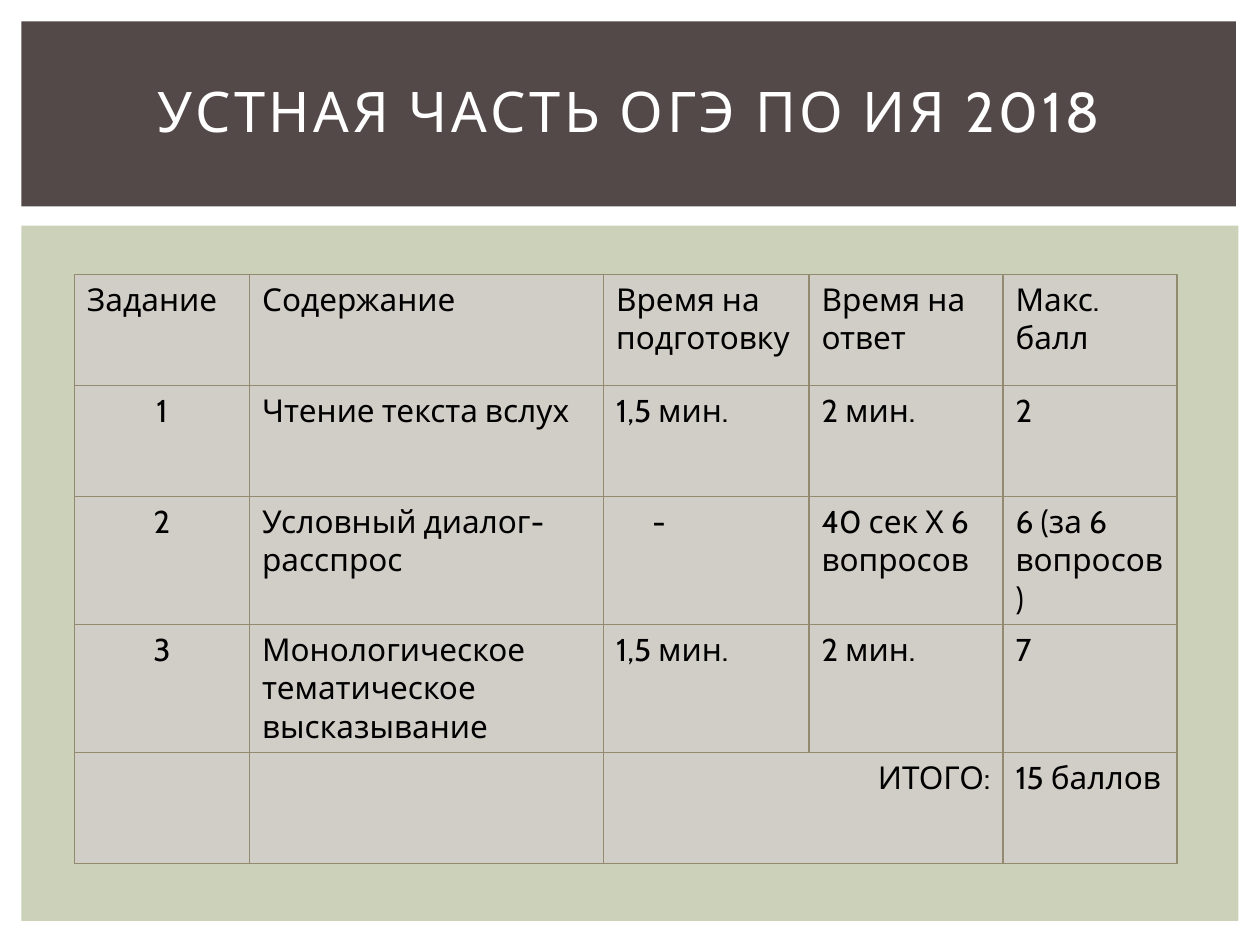
import pptx
import pptx.util
import pptx.dml.color
import pptx.enum.shapes
import pptx.enum.text
import pptx.oxml.ns
from dataclasses import dataclass
from lxml import etree

Pt = pptx.util.Pt
RGBColor = pptx.dml.color.RGBColor
Align = pptx.enum.text.PP_ALIGN
Anchor = pptx.enum.text.MSO_ANCHOR
qn = pptx.oxml.ns.qn

BROWN = RGBColor(0x53, 0x49, 0x49)
GREEN = RGBColor(0xCC, 0xD1, 0xB9)
GREY = RGBColor(0xD1, 0xCE, 0xC7)
OLIVE = RGBColor(0x92, 0x8B, 0x70)
WHITE = RGBColor(0xFF, 0xFF, 0xFF)
BLACK = RGBColor(0, 0, 0)

FONT = "Cabin"
RULE = 0.79
INDENT = 28


@dataclass
class Band:
    left: float
    top: float
    width: float
    height: float
    color: RGBColor


BANDS = [
    Band(12.2, 128.9, 695.5, 397.4, GREEN),
    Band(12.2, 12.2, 694.1, 105.8, BROWN),
]
COLS = [100.1, 202.3, 117.4, 110.9, 99.4]
ROWS = [63.4, 63.4, 63.4, 72.7, 63.4]
CELLS = [
    ["Задание", "Содержание", "Время на подготовку", "Время на ответ", "Макс. балл"],
    ["1", "Чтение текста вслух", "1,5 мин.", "2 мин.", "2"],
    ["2", "Условный диалог-расспрос", "-", "40 сек Х 6 вопросов", "6 (за 6 вопросов)"],
    ["3", "Монологическое тематическое высказывание", "1,5 мин.", "2 мин.", "7"],
    ["", "", "ИТОГО:", "", "15 баллов"],
]


def write(frame, text: str, size: float = 18, color: RGBColor = BLACK,
          align=Align.LEFT, track: float = 0, line: float = 1) -> None:
    """Put one formatted paragraph into a text frame."""
    para = frame.paragraphs[0]
    para.alignment = align
    para.line_spacing = line
    para.font.size = Pt(size)
    if not text:
        return
    run = para.add_run()
    run.text = text
    run.font.name = FONT
    run.font.size = Pt(size)
    run.font.bold = False
    run.font.color.rgb = color
    if track:
        run.font._element.set("spc", str(int(track * 100)))


def draw(slide, band: Band) -> None:
    box = slide.shapes.add_shape(
        pptx.enum.shapes.MSO_SHAPE.RECTANGLE,
        Pt(band.left), Pt(band.top), Pt(band.width), Pt(band.height))
    box.shadow.inherit = False
    box.fill.solid()
    box.fill.fore_color.rgb = band.color
    box.line.fill.background()


def style(cell) -> None:
    """Rule all four sides of a cell, then fill it."""
    props = cell._tc.get_or_add_tcPr()
    for side in ("lnL", "lnR", "lnT", "lnB"):
        edge = etree.SubElement(props, qn(f"a:{side}"), w=str(int(Pt(RULE))))
        fill = etree.SubElement(edge, qn("a:solidFill"))
        etree.SubElement(fill, qn("a:srgbClr"), val=str(OLIVE))
    cell.fill.solid()
    cell.fill.fore_color.rgb = GREY


def place(row: int, col: int):
    """Return the alignment of a cell."""
    if row and col == 0:
        return Align.CENTER
    return Align.RIGHT if (row, col) == (4, 2) else Align.LEFT


def grid(slide) -> None:
    table = slide.shapes.add_table(
        len(ROWS), len(COLS), Pt(42.5), Pt(157),
        Pt(sum(COLS)), Pt(sum(ROWS))).table
    table.first_row = False
    table.horz_banding = False
    for col, width in zip(table.columns, COLS):
        col.width = Pt(width)
    for row, height in zip(table.rows, ROWS):
        row.height = Pt(height)
    for r, texts in enumerate(CELLS):
        for c, text in enumerate(texts):
            cell = table.cell(r, c)
            style(cell)
            if text == "-":
                cell.margin_left = Pt(INDENT)
            write(cell.text_frame, text, align=place(r, c))
    table.cell(4, 2).merge(table.cell(4, 3))


def main() -> None:
    deck = pptx.Presentation()
    deck.slide_width, deck.slide_height = Pt(720), Pt(540)
    slide = deck.slides.add_slide(deck.slide_layouts[5])

    # Background bands
    for band in BANDS:
        draw(slide, band)

    # Title, raised above the bands
    title = slide.shapes.title
    slide.shapes._spTree.append(title._element)
    title.left, title.top = Pt(25.2), Pt(20.9)
    title.width, title.height = Pt(668.2), Pt(88.6)
    title.text_frame.vertical_anchor = Anchor.MIDDLE
    write(title.text_frame, "УСТНАЯ ЧАСТЬ ОГЭ ПО ИЯ 2018", size=32,
          color=WHITE, align=Align.CENTER, track=2, line=0.9)

    # Table of tasks
    grid(slide)
    deck.save("out.pptx")


if __name__ == "__main__":
    main()
